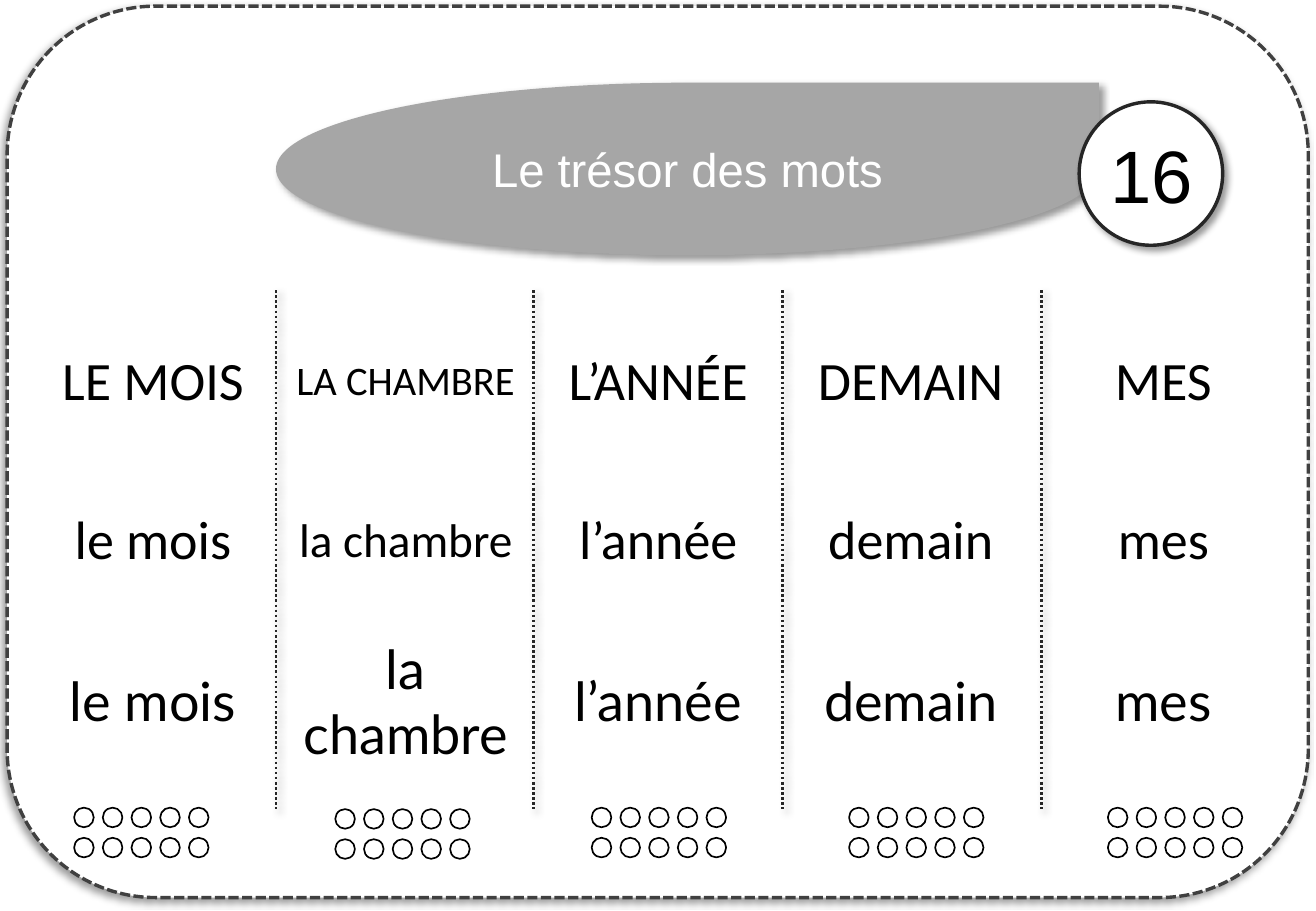
from lxml.etree import SubElement
from pptx import Presentation
from pptx.dml.color import RGBColor
from pptx.enum.dml import MSO_LINE
from pptx.enum.shapes import MSO_CONNECTOR, MSO_SHAPE
from pptx.enum.text import MSO_ANCHOR, MSO_AUTO_SIZE, PP_ALIGN
from pptx.oxml.ns import qn
from pptx.util import Cm, Pt

WORDS = ["le mois", "la chambre", "l’année", "demain", "mes"]
DIVIDERS = [5.77, 11.15, 16.36, 21.77]
DOT_GROUPS = [(1.55, 16.89), (7.01, 16.92), (12.37, 16.89), (17.75, 16.89), (23.16, 16.89)]
NO_GRID_STYLE = "{2D5ABB26-0587-4C30-8999-92F81FD0307C}"


def color(value):
    """Turn a hex string into a colour."""
    return RGBColor.from_string(value)


def set_all(target, values):
    """Set each attribute in a dict on the target."""
    for name, value in values.items():
        setattr(target, name, value)


class Card:
    """Hold the style and the current slide of a word card."""

    white, black, dark, grey = "FFFFFF", "000000", "262626", "A6A6A6"

    def __init__(self, prs):
        """Add a slide with a title and a body."""
        self.s = prs.slides.add_slide(prs.slide_layouts[1])

    def effect(self, sp, angle=None):
        """Give an element a soft shadow, or none without an angle."""
        effects = SubElement(sp._element.spPr, qn("a:effectLst"))
        if angle is not None:
            shadow = SubElement(effects, qn("a:outerShdw"), blurRad=str(Pt(4)), dist=str(Pt(3)),
                                dir=str(angle * 60000), algn="tl", rotWithShape="0")
            rgb = SubElement(shadow, qn("a:srgbClr"), val=self.black)
            SubElement(rgb, qn("a:alpha"), val="40000")

    def outline(self, line, hex_color, width, dash=None):
        """Format a line."""
        line.color.rgb = color(hex_color)
        set_all(line, {"width": Pt(width), "dash_style": dash})

    def shape(self, kind, box, fill, line=None, angle=None, parent=None):
        """Add a filled shape to the slide or to a group."""
        sp = (parent or self.s).shapes.add_shape(kind, *map(Cm, box))
        sp.fill.solid()
        sp.fill.fore_color.rgb = color(fill)
        if line:
            self.outline(sp.line, *line)
        else:
            sp.line.fill.background()
        self.effect(sp, angle)

    def divider(self, x, top, bottom):
        """Add a dotted vertical line."""
        line = self.s.shapes.add_connector(MSO_CONNECTOR.STRAIGHT, Cm(x), Cm(top), Cm(x), Cm(bottom))
        self.outline(line.line, self.dark, 1.5, MSO_LINE.ROUND_DOT)
        self.effect(line, 45)

    def dots(self, left, top):
        """Add a group of two rows of five circles."""
        group = self.s.shapes.add_group_shape()
        for i in range(10):
            row, col = divmod(i, 5)
            box = (left + col * 0.6, top + row * 0.63, 0.41, 0.41)
            self.shape(MSO_SHAPE.OVAL, box, self.white, (self.black, 1), parent=group)

    def label(self, tf, text, size, font, hex_color):
        """Fill a text frame with one centred paragraph."""
        p = tf.paragraphs[0]
        p.alignment = PP_ALIGN.CENTER
        r = p.add_run()
        r.text = text
        set_all(r.font, {"size": Pt(size), "name": font, "bold": False})
        r.font.color.rgb = color(hex_color)

    def placeholder(self, idx, box, text, size, hex_color, frame):
        """Move a placeholder to the front and fill it."""
        sp = self.s.placeholders[idx]
        set_all(sp, dict(zip(("left", "top", "width", "height"), map(Cm, box))))
        self.s.shapes._spTree.append(sp._element)
        tf = sp.text_frame
        set_all(tf, {"word_wrap": True, "auto_size": MSO_AUTO_SIZE.NONE, **frame})
        p = tf.paragraphs[0]
        p.space_before = Pt(0)
        pPr = p._p.get_or_add_pPr()
        pPr.set("marL", "0")
        pPr.set("indent", "0")
        SubElement(pPr, qn("a:buNone"))
        self.label(tf, text, size, "Arial", hex_color)

    def table(self, box, rows):
        """Add a plain table from rows of text, size and font."""
        table = self.s.shapes.add_table(len(rows), len(rows[0]), *map(Cm, box)).table
        set_all(table, {"first_row": False, "horz_banding": False})
        table._tbl.tblPr.find(qn("a:tableStyleId")).text = NO_GRID_STYLE
        for i, row in enumerate(rows):
            for j, (text, size, font) in enumerate(row):
                cell = table.cell(i, j)
                cell.fill.background()
                cell.vertical_anchor = MSO_ANCHOR.MIDDLE
                self.label(cell.text_frame, text, size, font, self.black)


def main():
    """Build the word card."""
    prs = Presentation()
    set_all(prs, {"slide_width": Cm(27.51), "slide_height": Cm(19.05)})
    card = Card(prs)

    card.shape(MSO_SHAPE.ROUNDED_RECTANGLE, (0.15, 0.13, 27.2, 18.64), card.white,
               ("404040", 2, MSO_LINE.SQUARE_DOT), 135)
    for x in DIVIDERS:
        card.divider(x, 6.07, 16.92)
    for left, top in DOT_GROUPS:
        card.dots(left, top)

    banner = (5.77, 1.73, 17.2, 3.61)
    card.shape(MSO_SHAPE.TEAR, banner, card.grey, angle=45)
    card.placeholder(0, banner, "Le trésor des mots", 28, card.white,
                     {"vertical_anchor": MSO_ANCHOR.MIDDLE})
    card.shape(MSO_SHAPE.OVAL, (22.56, 2.13, 3, 3), card.white, (card.dark, 2), 45)
    card.placeholder(1, (22.58, 2.46, 3, 2.79), "16", 44, card.black,
                     {"vertical_anchor": MSO_ANCHOR.TOP, "margin_top": Cm(0.25)})

    capitals = [(w.upper(), 24 if w == "la chambre" else 32, "Calibri") for w in WORDS]
    print_words = [(w, 28 if w == "la chambre" else 32, "Calibri") for w in WORDS]
    script_words = [(w, 32, "Lato") for w in WORDS]
    card.table((0.56, 6.32, 26.4, 10), [capitals, print_words, script_words])
    prs.save("out.pptx")


if __name__ == "__main__":
    main()
